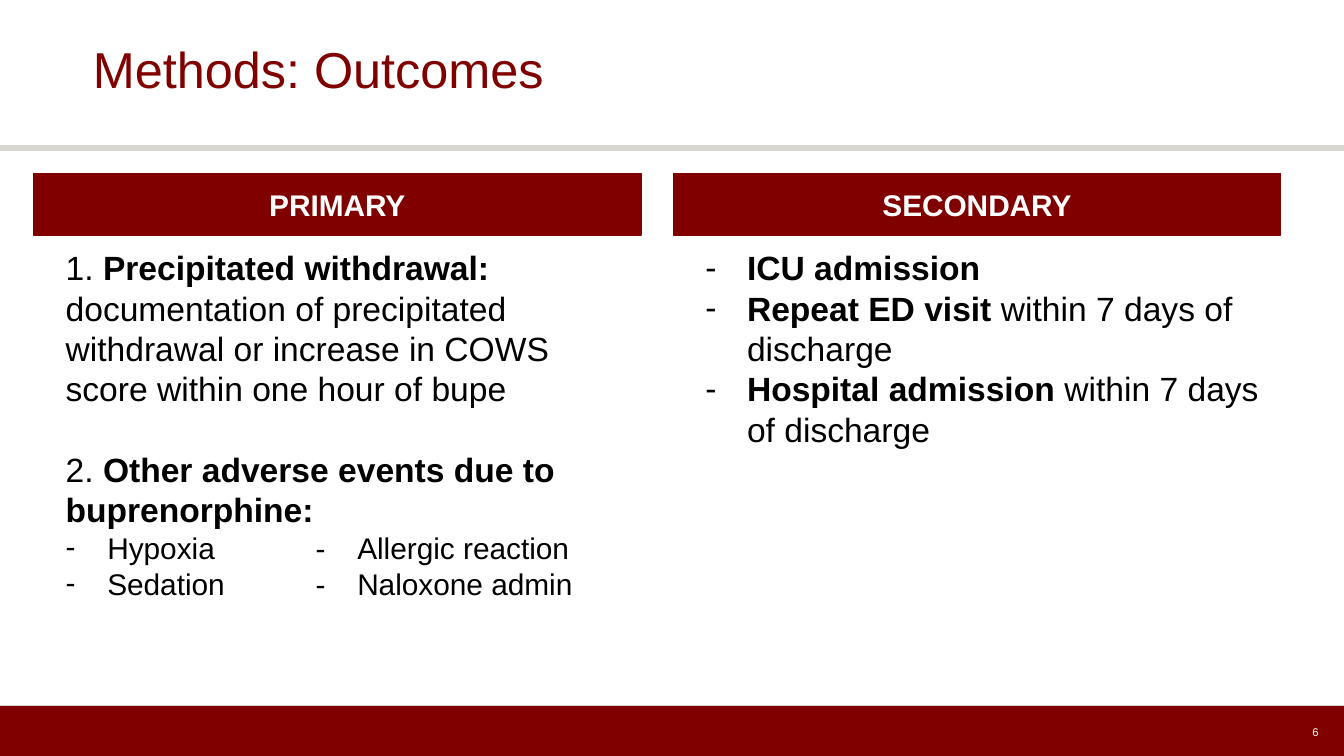
import pptx
import pptx.util
import pptx.dml.color
import pptx.enum.shapes
import pptx.enum.text
import pptx.oxml.ns
from lxml import etree

Inches = pptx.util.Inches
Pt = pptx.util.Pt
ALIGN = pptx.enum.text.PP_ALIGN
ANCHOR = pptx.enum.text.MSO_ANCHOR

MAROON, GREY, WHITE, BLACK = "800000", "D6D6CE", "FFFFFF", "000000"
BODY_INSETS = (0.1, 0.1, 0.1, 0.1)


def color(hex_value):
    return pptx.dml.color.RGBColor.from_string(hex_value)


def set_format(target, values):
    for name, value in values.items():
        setattr(target, name, value)


def set_frame(shape, insets, anchor=ANCHOR.TOP):
    left, top, right, bottom = map(Inches, insets)
    set_format(shape.text_frame, {
        "word_wrap": True, "vertical_anchor": anchor,
        "margin_left": left, "margin_top": top,
        "margin_right": right, "margin_bottom": bottom})


def add_rule(slide, y, width, hex_value):
    rule = slide.shapes.add_connector(
        pptx.enum.shapes.MSO_CONNECTOR.STRAIGHT,
        Inches(0), Inches(y), Inches(10), Inches(y))
    rule.line.width = Pt(width)
    rule.line.color.rgb = color(hex_value)
    etree.SubElement(rule._element.spPr, pptx.oxml.ns.qn("a:effectLst"))


def add_band(slide, box, line=None):
    band = slide.shapes.add_shape(
        pptx.enum.shapes.MSO_SHAPE.RECTANGLE, *map(Inches, box))
    band.shadow.inherit = False
    band.fill.solid()
    band.fill.fore_color.rgb = color(MAROON)
    if line:
        band.line.color.rgb = color(MAROON)
        band.line.width = Pt(line)
    else:
        band.line.fill.background()
    return band


def add_text(slide, box, insets, anchor=ANCHOR.TOP):
    text = slide.shapes.add_textbox(*map(Inches, box))
    set_frame(text, insets, anchor)
    return text


def write(paragraph, runs, size, hex_value=BLACK, **layout):
    """Fill a paragraph with (text, bold) runs."""
    set_format(paragraph, layout)
    for words, bold in runs:
        run = paragraph.add_run()
        run.text = words
        set_format(run.font, {"name": "Arial", "size": Pt(size), "bold": bold})
        run.font.color.rgb = color(hex_value)


def indent(paragraph, left, hanging=0, bullet=None, tabs=()):
    props = paragraph._p.get_or_add_pPr()
    props.set("marL", str(Inches(left)))
    props.set("indent", str(Inches(-hanging)))
    qn = pptx.oxml.ns.qn
    if bullet:
        bullet_color = etree.SubElement(props, qn("a:buClr"))
        etree.SubElement(bullet_color, qn("a:srgbClr"), val=BLACK)
        etree.SubElement(props, qn("a:buFont"), typeface="Arial")
        etree.SubElement(props, qn("a:buChar"), char=bullet)
    if tabs:
        tab_list = etree.SubElement(props, qn("a:tabLst"))
        for position in tabs:
            etree.SubElement(tab_list, qn("a:tab"),
                             pos=str(Inches(position)), algn="l")


def add_outcomes(slide, box, items):
    """Each item: runs, size, indent values, paragraph layout."""
    frame = add_text(slide, box, BODY_INSETS).text_frame
    for number, (runs, size, indents, layout) in enumerate(items):
        paragraph = frame.add_paragraph() if number else frame.paragraphs[0]
        indent(paragraph, **indents)
        write(paragraph, runs, size, **layout)


def add_heading(slide, left, words):
    heading = add_band(slide, (left, 1.29, 4.52, 0.46), line=0.75)
    set_frame(heading, BODY_INSETS)
    write(heading.text_frame.paragraphs[0], [(words, True)], 16, WHITE,
          alignment=ALIGN.CENTER)


def main():
    # Widescreen slide, 16:9
    deck = pptx.Presentation()
    width = Inches(10)
    set_format(deck, {"slide_width": width, "slide_height": width * 9 // 16})
    slide = deck.slides.add_slide(deck.slide_layouts[6])

    # Title rule and footer band
    add_rule(slide, 1.1, 3, GREY)
    add_band(slide, (0, 5.25, 10, 0.38))
    add_rule(slide, 5.25, 0.75, GREY)

    # Title and slide number
    title = add_text(slide, (0.69, 0, 8.62, 1.08), (0, 0.04, 0, 0.04),
                     ANCHOR.MIDDLE)
    write(title.text_frame.paragraphs[0], [("Methods: Outcomes", False)], 27,
          MAROON, line_spacing=0.9)
    page = add_text(slide, (7.06, 5.3, 2.82, 0.3), (0.07, 0.04, 0.07, 0.04),
                    ANCHOR.MIDDLE)
    write(page.text_frame.paragraphs[0], [("6", False)], 6, WHITE,
          alignment=ALIGN.RIGHT)

    # Column headings
    left_column, right_column = 0.25, 5.01
    add_heading(slide, left_column, "PRIMARY")
    add_heading(slide, right_column, "SECONDARY")

    # Primary outcomes, with adverse events in two tabbed columns
    plain = {"left": 0.14}
    dashed = {"left": 0.45, "hanging": 0.31, "bullet": "-"}
    tabbed = {**dashed, "tabs": (2, 2.31)}
    add_outcomes(slide, (left_column, 1.74, 4.59, 3.17), [
        ([("1. ", False), ("Precipitated withdrawal: ", True),
          ("documentation of precipitated withdrawal or increase in COWS "
           "score within one hour of bupe", False)], 18, plain, {}),
        ([("2. ", False),
          ("Other adverse events due to buprenorphine:", True)], 18, plain,
         {"space_before": Pt(21.6)}),
        ([("Hypoxia\t-\tAllergic reaction", False)], 16, tabbed, {}),
        ([("Sedation\t-\tNaloxone admin", False)], 16, tabbed, {}),
    ])

    # Secondary outcomes
    add_outcomes(slide, (right_column, 1.74, 4.52, 1.61), [
        ([("ICU admission", True)], 18, dashed, {}),
        ([("Repeat ED visit ", True),
          ("within 7 days of discharge", False)], 18, dashed, {}),
        ([("Hospital admission", True),
          (" within 7 days of discharge", False)], 18, dashed, {}),
    ])

    deck.save("out.pptx")


if __name__ == "__main__":
    main()
